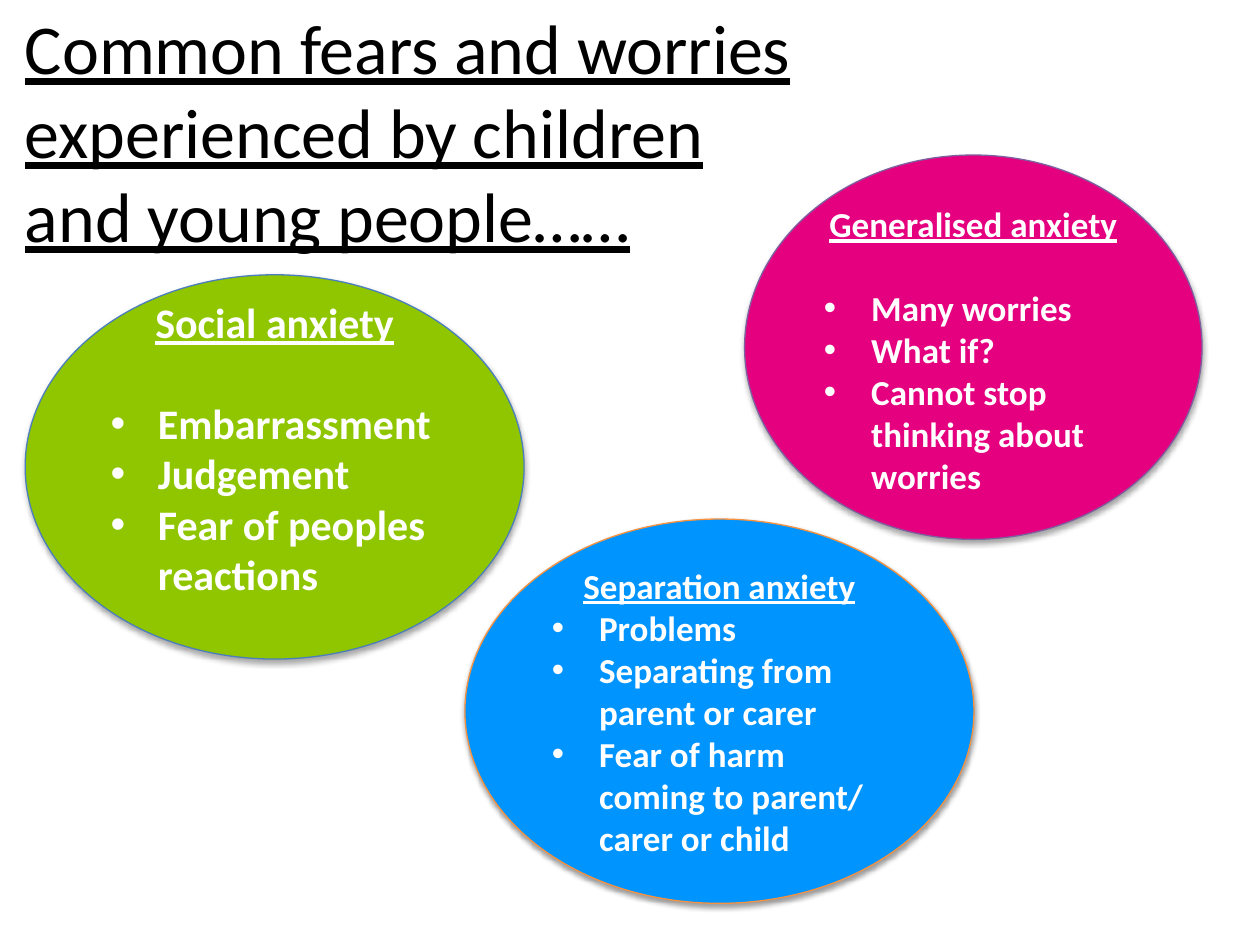
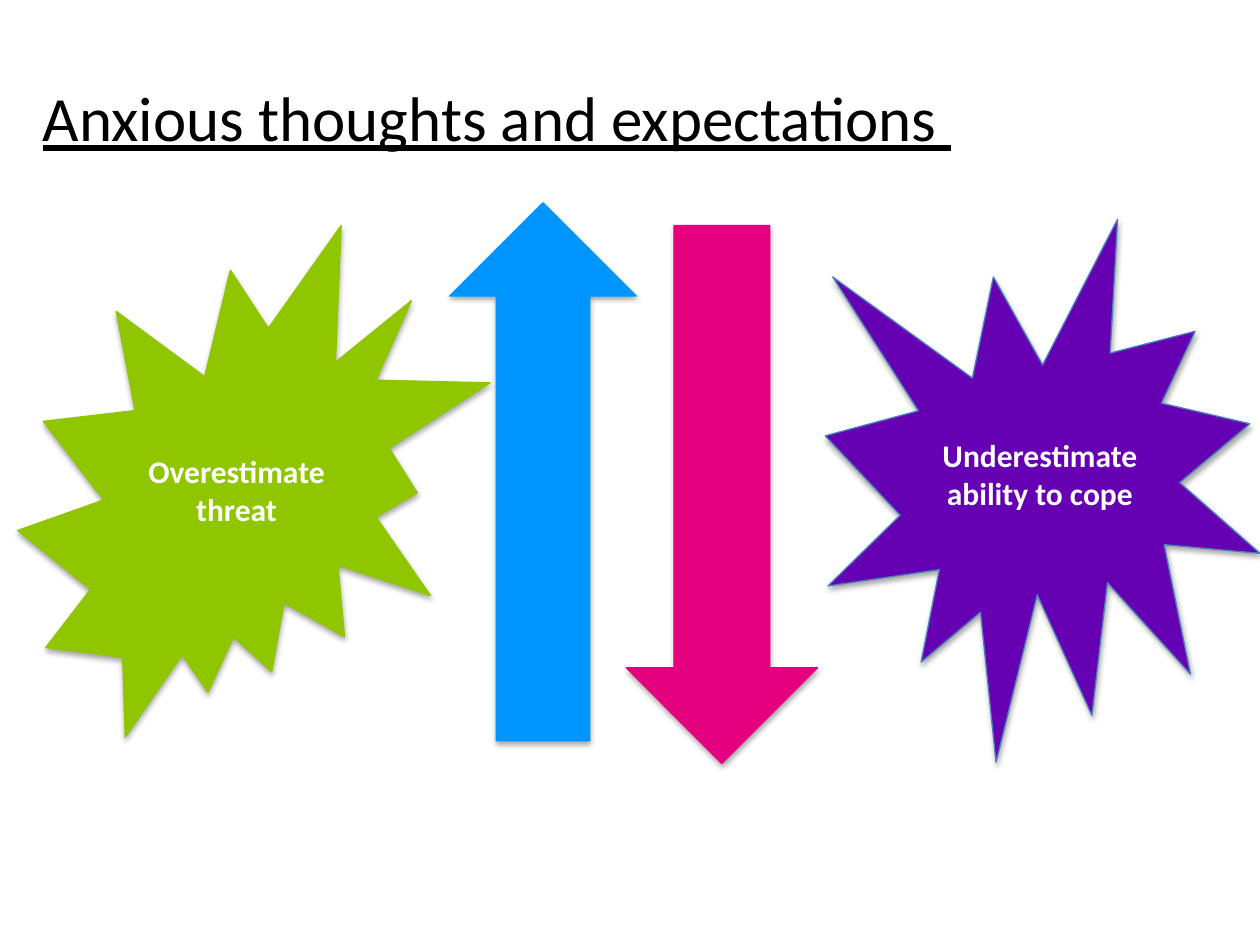
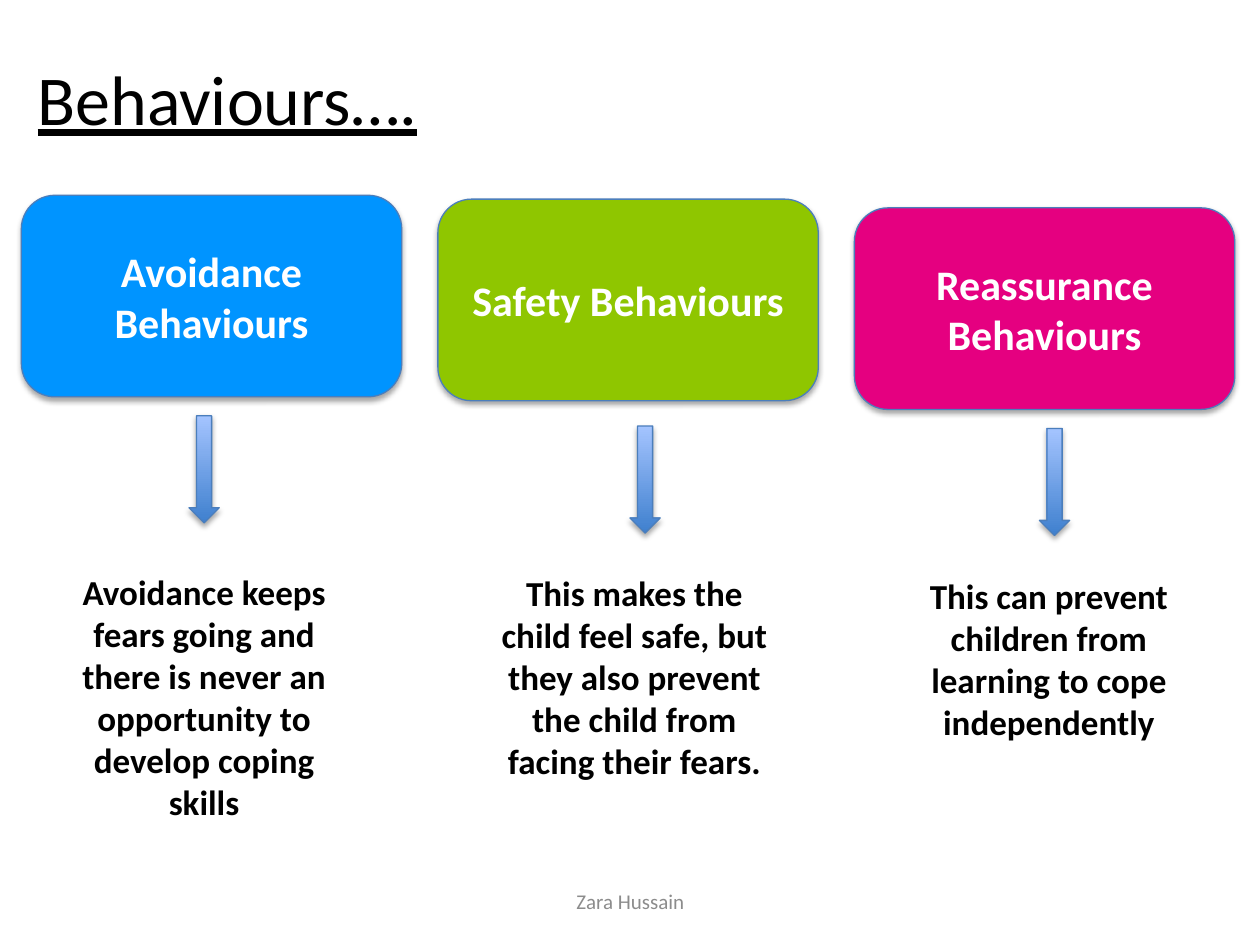
"""Build three slides about anxiety in children and young people."""
from dataclasses import dataclass

from lxml.etree import SubElement
from pptx import Presentation
from pptx.dml.color import RGBColor
from pptx.enum.shapes import MSO_SHAPE
from pptx.enum.text import MSO_ANCHOR, PP_ALIGN
from pptx.oxml.ns import qn
from pptx.util import Pt


@dataclass(frozen=True)
class Theme:
    font: str = "Calibri"
    black: str = "000000"
    white: str = "FFFFFF"
    grey: str = "8C8C8C"
    blue: str = "0094FF"
    pink: str = "E50080"
    green: str = "8FC600"
    purple: str = "6500B3"
    outline: str = "4B7EBC"
    orange_outline: str = "F69240"
    purple_outline: str = "7D60A0"
    arrow_stops: tuple = ("3F80CE", "A4C4FF")
    title: int = 40
    small_title: int = 36
    heading: int = 24
    body: int = 20
    label: int = 18
    footer: int = 12
    line_height: float = 1.2
    bullet_indent: int = 27


def write(para, text, font, size, color, bold=False, underline=False, align=PP_ALIGN.LEFT):
    para.alignment = align
    span = para.add_run()
    span.text = text
    span.font.name = font
    span.font.size = Pt(size)
    span.font.bold = bold
    span.font.underline = underline
    span.font.color.rgb = RGBColor.from_string(color)


class Deck:
    def __init__(self, theme):
        self.theme = theme
        self.deck = Presentation()
        self.deck.slide_width, self.deck.slide_height = Pt(720), Pt(540)
        self.page = None

    def new_page(self):
        self.page = self.deck.slides.add_slide(self.deck.slide_layouts[6])

    def text(self, place, text, size, color, anchor=MSO_ANCHOR.TOP, **look):
        box = self.page.shapes.add_textbox(*map(Pt, place))
        box.text_frame.word_wrap = True
        box.text_frame.vertical_anchor = anchor
        write(box.text_frame.paragraphs[0], text, self.theme.font, size, color, **look)

    def title(self, place, text, size):
        self.text(place, text, size, self.theme.black, MSO_ANCHOR.MIDDLE, underline=True)

    def shape(self, kind, place, fill=None, line=None, blur=3.1, distance=1.8, opacity=35):
        shape = self.page.shapes.add_shape(kind, *map(Pt, place))
        if fill:
            shape.fill.solid()
            shape.fill.fore_color.rgb = RGBColor.from_string(fill)
        shape.line.color.rgb = RGBColor.from_string(line or self.theme.outline)
        shape.line.width = Pt(0.75)
        shape.text_frame.word_wrap = True
        shape.text_frame.vertical_anchor = MSO_ANCHOR.MIDDLE
        self.shadow(shape, blur, distance, opacity)
        return shape

    def shadow(self, shape, blur, distance, opacity):
        shape.shadow.inherit = False
        effects = shape._element.spPr.find(qn("a:effectLst"))
        shadow = SubElement(effects, qn("a:outerShdw"), blurRad=str(Pt(blur)),
                            dist=str(Pt(distance)), dir="5400000", rotWithShape="0")
        color = SubElement(shadow, qn("a:srgbClr"), val=self.theme.black)
        SubElement(color, qn("a:alpha"), val=str(opacity * 1000))

    def label(self, kind, place, text, size, fill, line=None):
        shape = self.shape(kind, place, fill, line)
        write(shape.text_frame.paragraphs[0], text, self.theme.font, size, self.theme.white,
              bold=True, align=PP_ALIGN.CENTER)

    def bubble(self, place, heading, points, size, fill, line=None, gap_lines=1,
               extra_top=0, extra_bottom=0, **shadow):
        theme = self.theme
        frame = self.shape(MSO_SHAPE.OVAL, place, fill, line, **shadow).text_frame
        frame.margin_top, frame.margin_bottom = Pt(3.6 + extra_top), Pt(3.6 + extra_bottom)
        look = dict(font=theme.font, size=size, color=theme.white, bold=True)
        write(frame.paragraphs[0], heading, underline=True, align=PP_ALIGN.CENTER, **look)
        for index, point in enumerate(points):
            para = frame.add_paragraph()
            if index == 0:
                para.space_before = Pt(gap_lines * size * theme.line_height)
            self.bullet(para)
            write(para, point, **look)

    def bullet(self, para):
        indent = Pt(self.theme.bullet_indent)
        properties = para._p.get_or_add_pPr()
        properties.set("marL", str(indent))
        properties.set("indent", str(-indent))
        SubElement(properties, qn("a:buFont"), typeface="Arial")
        SubElement(properties, qn("a:buChar"), char="•")

    def small_arrow(self, left, top):
        arrow = self.shape(MSO_SHAPE.DOWN_ARROW, (left, top, 17.3, 61.2))
        arrow.fill.gradient()
        arrow.fill.gradient_angle = 90
        for stop, color in zip(arrow.fill.gradient_stops, self.theme.arrow_stops):
            stop.color.rgb = RGBColor.from_string(color)


def fears_page(deck, theme):
    deck.new_page()
    deck.title((7.2, 29.5, 470.9, 90),
               "Common fears and worries experienced by children and young people……", theme.title)
    deck.bubble((265.7, 296.6, 290.9, 219.6), "Separation anxiety",
                ["Problems", "Separating from parent or carer",
                 "Fear of harm coming to parent/ carer or child"],
                theme.body, theme.blue, theme.orange_outline, gap_lines=0,
                distance=1.6, opacity=38)
    deck.bubble((425.5, 88.6, 261.4, 219.6), "Generalised anxiety",
                ["Many worries", "What if?", "Cannot stop thinking about worries"],
                theme.body, theme.pink, theme.purple_outline, extra_top=2.4)
    deck.bubble((14.4, 157, 285.1, 219.6), "Social anxiety",
                ["Embarrassment", "Judgement", "Fear of peoples reactions"],
                theme.heading, theme.green, extra_bottom=21.6)


def thoughts_page(deck, theme):
    deck.new_page()
    deck.title((17.3, 21.6, 555.1, 90), "Anxious thoughts and expectations ", theme.small_title)
    deck.label(MSO_SHAPE.EXPLOSION2, (10.1, 128.9, 270, 292.3), "Overestimate threat",
               theme.label, theme.green, theme.green)
    deck.shape(MSO_SHAPE.UP_ARROW, (257, 115.9, 106.6, 307.4), theme.blue, theme.blue)
    deck.shape(MSO_SHAPE.DOWN_ARROW, (357.8, 128.9, 109.4, 307.4), theme.pink, theme.pink)
    deck.label(MSO_SHAPE.EXPLOSION1, (471.6, 125.3, 248.4, 310.3),
               "Underestimate ability to cope", theme.label, theme.purple)


def behaviours_page(deck, theme):
    deck.new_page()
    deck.title((14.4, 10.8, 517, 90), "Behaviours….", theme.title)
    deck.text((246.2, 500.4, 228.2, 28.8), "Zara Hussain", theme.footer, theme.grey,
              MSO_ANCHOR.MIDDLE, align=PP_ALIGN.CENTER)
    columns = [
        ("Avoidance Behaviours", theme.blue, 111.6, (108, 237.6), (25.2, 322.6, 182.9, 152.6),
         "Avoidance keeps fears going and there is never an opportunity to develop coping skills"),
        ("Safety Behaviours", theme.green, 113.8, (360, 243.4), (277.9, 323.3, 169.2, 128),
         "This makes the child feel safe, but they also prevent the child from facing their fears."),
        ("Reassurance Behaviours", theme.pink, 118.8, (594, 244.8), (521.3, 324.7, 156.2, 104.4),
         "This can prevent children from learning to cope independently"),
    ]
    for index, (name, fill, top, arrow, place, effect) in enumerate(columns):
        deck.label(MSO_SHAPE.ROUNDED_RECTANGLE, (12.2 + 238 * index, top, 217.4, 115.2),
                   name, theme.heading, fill)
        deck.small_arrow(*arrow)
        deck.text(place, effect, theme.body, theme.black, bold=True, align=PP_ALIGN.CENTER)


def main():
    theme = Theme()
    deck = Deck(theme)
    for build in (fears_page, thoughts_page, behaviours_page):
        build(deck, theme)
    deck.deck.save("out.pptx")


if __name__ == "__main__":
    main()
